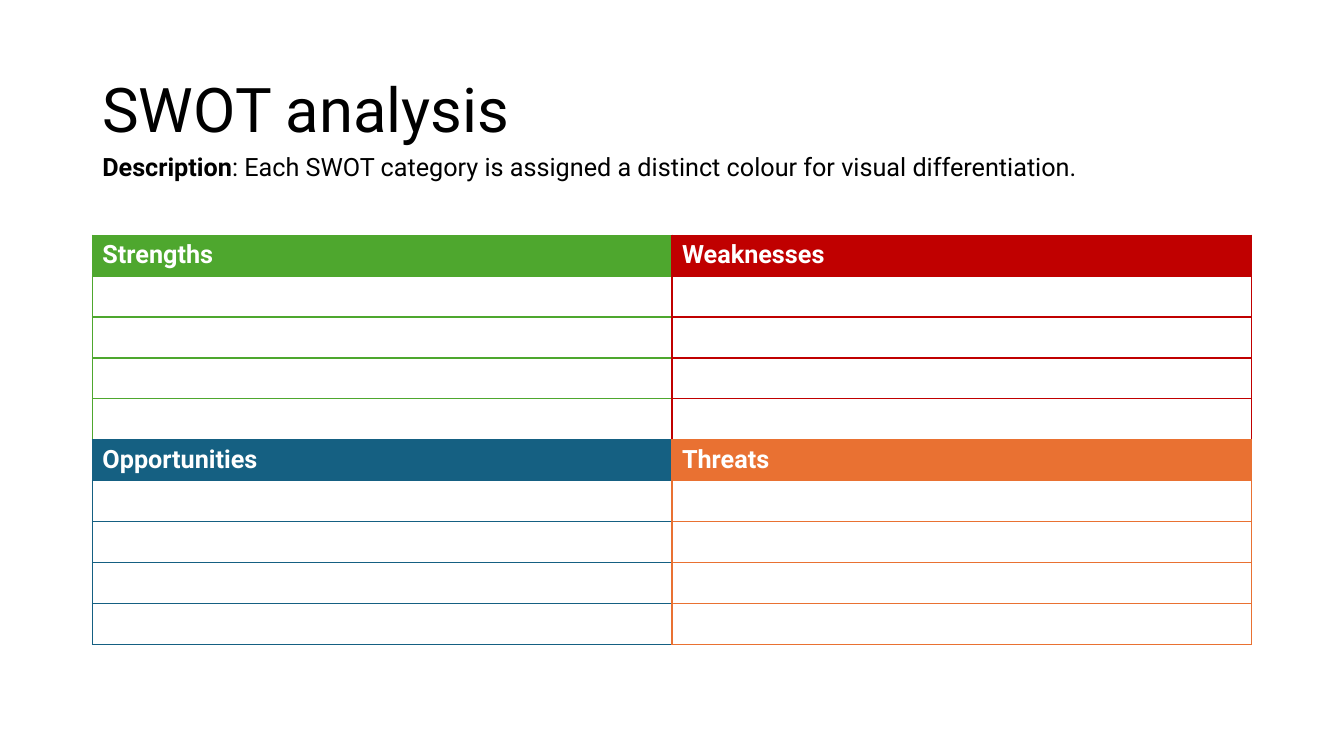
from lxml import etree
from pptx import Presentation
from pptx.dml.color import RGBColor
from pptx.enum.text import MSO_ANCHOR, MSO_AUTO_SIZE
from pptx.oxml.ns import qn
from pptx.util import Pt

PX = 9525  # EMU per px, 96 px to the inch
MIDDLE, TOP = MSO_ANCHOR.MIDDLE, MSO_ANCHOR.TOP
FIT_SHAPE, FIXED = MSO_AUTO_SIZE.SHAPE_TO_FIT_TEXT, MSO_AUTO_SIZE.NONE

BLACK = RGBColor(0x00, 0x00, 0x00)
WHITE = RGBColor(0xFF, 0xFF, 0xFF)
GREEN = RGBColor(0x4E, 0xA7, 0x2E)
RED = RGBColor(0xC0, 0x00, 0x00)
BLUE = RGBColor(0x15, 0x60, 0x82)
ORANGE = RGBColor(0xE9, 0x71, 0x32)

LEFT, GRID_TOP = 88, 224
COLUMN_WIDTH, ROW_HEIGHT, ROWS = 552, 39, 5
QUADRANTS = [
    [("Strengths", GREEN), ("Weaknesses", RED)],
    [("Opportunities", BLUE), ("Threats", ORANGE)],
]


class SlideBuilder:
    font_name = "Roboto"
    body_size = 18
    border_width = Pt(1)

    def __init__(self, slide):
        self.slide = slide

    def style(self, paragraph, size, color):
        font = paragraph.font
        font.name, font.size = self.font_name, Pt(size)
        font.color.rgb = color

    def text(self, box, runs, size, anchor=TOP, fit=FIXED, line_spacing=None):
        """Add a text box from (text, bold) runs."""
        frame = self.slide.shapes.add_textbox(*(n * PX for n in box)).text_frame
        frame.word_wrap = True
        frame.auto_size = fit
        frame.vertical_anchor = anchor
        paragraph = frame.paragraphs[0]
        paragraph.line_spacing = line_spacing
        self.style(paragraph, size, BLACK)
        for words, bold in runs:
            run = paragraph.add_run()
            run.text = words
            run.font.bold = bold

    def borders(self, cell, color):
        properties = cell._tc.get_or_add_tcPr()
        for position, side in enumerate(("lnL", "lnR", "lnT", "lnB")):
            line = etree.Element(qn(f"a:{side}"), w=str(self.border_width))
            fill = etree.SubElement(line, qn("a:solidFill"))
            etree.SubElement(fill, qn("a:srgbClr"), val=str(color))
            properties.insert(position, line)

    def quadrant(self, left, top, heading, color):
        """Add a one-column table with a coloured heading and empty rows."""
        box = (left, top, COLUMN_WIDTH, ROW_HEIGHT * ROWS)
        table = self.slide.shapes.add_table(ROWS, 1, *(n * PX for n in box)).table
        table.horz_banding = False
        for cell in table.iter_cells():
            cell.fill.background()
            self.style(cell.text_frame.paragraphs[0], self.body_size, BLACK)
            self.borders(cell, color)
        header = table.cell(0, 0)
        header.text = heading
        header.fill.solid()
        header.fill.fore_color.rgb = color
        paragraph = header.text_frame.paragraphs[0]
        self.style(paragraph, self.body_size, WHITE)
        paragraph.font.bold = True


def main():
    deck = Presentation()
    deck.slide_width, deck.slide_height = 1280 * PX, 720 * PX
    swot = SlideBuilder(deck.slides.add_slide(deck.slide_layouts[6]))

    # Title and description
    swot.text((LEFT, 38, 1104, 139), [("SWOT analysis", False)], 44,
              anchor=MIDDLE, line_spacing=0.9)
    swot.text((LEFT, 139, 1016, 39), [
        ("Description", True),
        (": Each SWOT category is assigned a distinct colour"
         " for visual differentiation.", False),
    ], swot.body_size, fit=FIT_SHAPE)

    # Two by two grid of quadrants
    for row, quadrants in enumerate(QUADRANTS):
        for column, (heading, color) in enumerate(quadrants):
            swot.quadrant(LEFT + column * COLUMN_WIDTH,
                          GRID_TOP + row * ROWS * ROW_HEIGHT, heading, color)

    deck.save("out.pptx")


if __name__ == "__main__":
    main()
